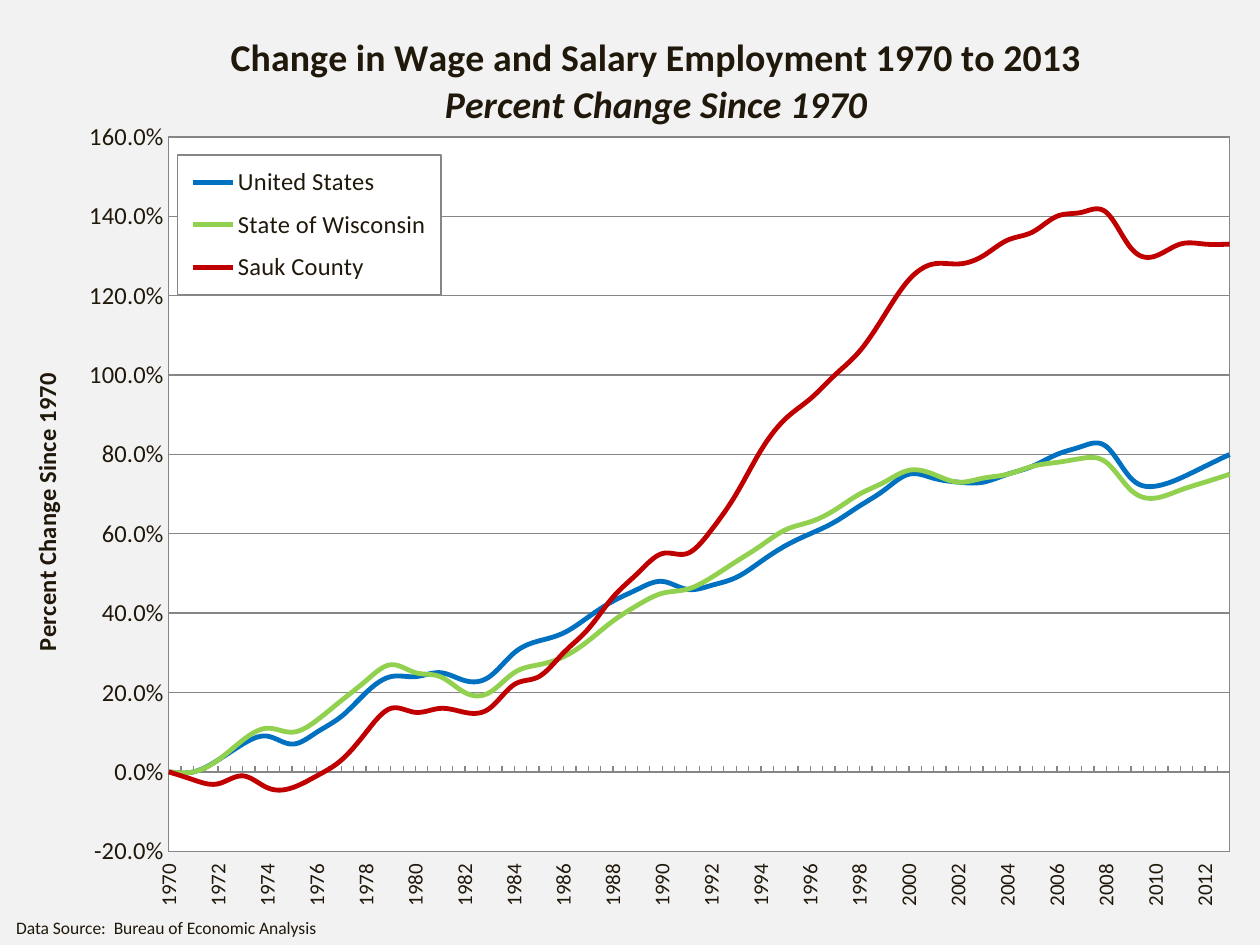
from dataclasses import dataclass

from lxml.etree import SubElement
from pptx import Presentation
from pptx.chart.data import CategoryChartData
from pptx.dml.color import RGBColor
from pptx.enum.chart import (
    XL_CHART_TYPE as ChartType,
    XL_LEGEND_POSITION as LegendPos,
    XL_TICK_LABEL_POSITION as LabelPos,
    XL_TICK_MARK as Tick,
)
from pptx.oxml import parse_xml
from pptx.oxml.ns import nsdecls, qn
from pptx.util import Inches, Pt


@dataclass(frozen=True)
class Theme:
    font: str = "Calibri"
    ink: str = "20180A"
    back: str = "F2F2F2"
    plot: str = "FFFFFF"
    rule: str = "868686"
    title: float = 21.6
    label: float = 14
    year: float = 12
    source: float = 10
    hairline: float = 0.75
    line: float = 2.75


@dataclass(frozen=True)
class Region:
    name: str
    color: str
    percents: tuple[int, ...]


THEME = Theme()
YEARS = range(1970, 2014)
REGIONS = (
    Region("United States", "0070C0", (
        0, 0, 3, 7, 9, 7, 10, 14, 20, 24, 24, 25, 23, 24, 30, 33, 35, 39, 43, 46, 48, 46,
        47, 49, 53, 57, 60, 63, 67, 71, 75, 74, 73, 73, 75, 77, 80, 82, 82, 74, 72, 74, 77, 80)),
    Region("State of Wisconsin", "92D050", (
        0, 0, 3, 8, 11, 10, 13, 18, 23, 27, 25, 24, 20, 20, 25, 27, 29, 33, 38, 42, 45, 46,
        49, 53, 57, 61, 63, 66, 70, 73, 76, 75, 73, 74, 75, 77, 78, 79, 78, 71, 69, 71, 73, 75)),
    Region("Sauk County", "C00000", (
        0, -2, -3, -1, -4, -4, -1, 3, 10, 16, 15, 16, 15, 16, 22, 24, 30, 36, 44, 50, 55, 55,
        61, 70, 81, 89, 94, 100, 106, 115, 124, 128, 128, 130, 134, 136, 140, 141, 141, 132,
        130, 133, 133, 133)),
)


def style_font(font, size: float, bold: bool = False, italic: bool = False) -> None:
    font.name = THEME.font
    font.size = Pt(size)
    font.bold = bold
    font.italic = italic
    font.color.rgb = RGBColor.from_string(THEME.ink)


def write(p, text: str, **fmt) -> None:
    r = p.add_run()
    r.text = text
    style_font(r.font, **fmt)


def style_line(line, color: str, width: float) -> None:
    line.color.rgb = RGBColor.from_string(color)
    line.width = Pt(width)


def place(element, index: int, inner: bool = False, **fractions: float) -> None:
    """Give a chart part a manual layout, in fractions of the chart."""
    for old in element.findall(qn("c:layout")):
        element.remove(old)
    layout = parse_xml(f"<c:layout {nsdecls('c')}/>")
    manual = SubElement(layout, qn("c:manualLayout"))
    if inner:
        SubElement(manual, qn("c:layoutTarget")).set("val", "inner")
    for key in ("x", "y"):
        SubElement(manual, qn(f"c:{key}Mode")).set("val", "edge")
    for key, value in fractions.items():
        SubElement(manual, qn(f"c:{key}")).set("val", str(value))
    element.insert(index, layout)


def area_format(fill: str, outlined: bool):
    """Make the fill and outline element of a chart area."""
    def solid(color: str) -> str:
        return f'<a:solidFill><a:srgbClr val="{color}"/></a:solidFill>'

    outline = solid(THEME.rule) if outlined else "<a:noFill/>"
    return parse_xml(
        f"<c:spPr {nsdecls('c', 'a')}>{solid(fill)}"
        f'<a:ln w="{Pt(THEME.hairline)}">{outline}</a:ln></c:spPr>'
    )


def turn_upward(element) -> None:
    body = element.find(".//" + qn("a:bodyPr"))
    body.set("rot", "-5400000")
    body.set("vert", "horz")


def format_year_axis(axis) -> None:
    axis.tick_label_position = LabelPos.LOW
    axis.major_tick_mark = Tick.NONE
    axis.minor_tick_mark = Tick.INSIDE
    style_font(axis.tick_labels.font, THEME.year)
    style_line(axis.format.line, THEME.rule, THEME.hairline)
    element = axis._element
    turn_upward(element.find(qn("c:txPr")))
    skip = parse_xml(f'<c:tickLblSkip {nsdecls("c")} val="2"/>')
    element.find(qn("c:noMultiLvlLbl")).addprevious(skip)


def format_percent_axis(axis) -> None:
    axis.minimum_scale, axis.maximum_scale, axis.major_unit = -0.2, 1.6, 0.2
    axis.major_tick_mark = axis.minor_tick_mark = Tick.NONE
    axis.tick_labels.number_format = "0.0%"
    axis.tick_labels.number_format_is_linked = False
    style_font(axis.tick_labels.font, THEME.label)
    style_line(axis.format.line, THEME.rule, THEME.hairline)
    style_line(axis.major_gridlines.format.line, THEME.rule, THEME.hairline)
    title = axis.axis_title
    write(title.text_frame.paragraphs[0], "Percent Change Since 1970", size=THEME.label, bold=True)
    turn_upward(title._element)
    place(title._element, 1, x=0.02, y=0.39)
    element = axis._element
    for old in element.findall(qn("c:crossBetween")):
        element.remove(old)
    on_tick = parse_xml(f'<c:crossBetween {nsdecls("c")} val="midCat"/>')
    element.find(qn("c:crosses")).addnext(on_tick)


def format_title(title) -> None:
    tf = title.text_frame
    write(tf.paragraphs[0], "Change in Wage and Salary Employment 1970 to 2013",
          size=THEME.title, bold=True)
    write(tf.add_paragraph(), "Percent Change Since 1970",
          size=THEME.title, bold=True, italic=True)
    place(title._element, 1, x=0.18, y=0.03)


def format_legend(legend) -> None:
    legend.position = LegendPos.BOTTOM
    legend.include_in_layout = False
    style_font(legend.font, THEME.label)
    element = legend._element
    place(element, 1, x=0.141, y=0.164, w=0.209, h=0.148)
    element.find(qn("c:txPr")).addprevious(area_format(THEME.plot, True))


def add_employment_chart(slide, width: int, height: int) -> None:
    data = CategoryChartData(number_format="0.0%")
    data.categories = [str(year) for year in YEARS]
    for region in REGIONS:
        data.add_series(region.name, [percent / 100 for percent in region.percents])
    chart = slide.shapes.add_chart(ChartType.LINE, 0, 0, width, height, data).chart
    style_font(chart.font, THEME.source)
    chart.has_title = chart.has_legend = True
    format_title(chart.chart_title)
    format_legend(chart.legend)
    format_year_axis(chart.category_axis)
    format_percent_axis(chart.value_axis)
    chart.plots[0].vary_by_categories = False
    for series, region in zip(chart.plots[0].series, REGIONS):
        series.smooth = True
        style_line(series.format.line, region.color, THEME.line)

    space = chart._chartSpace
    space.find(qn("c:txPr")).addprevious(area_format(THEME.back, False))
    plot_area = space.find(".//" + qn("c:plotArea"))
    place(plot_area, 0, inner=True, x=0.134, y=0.145, w=0.842, h=0.756)
    plot_area.append(area_format(THEME.plot, True))


def add_source(slide) -> None:
    box = slide.shapes.add_textbox(Inches(0.03), Inches(7.23), Inches(9.95), Inches(0.27))
    tf = box.text_frame
    tf.word_wrap = True
    write(tf.paragraphs[0], "Data Source:  Bureau of Economic Analysis", size=THEME.source)


def main() -> None:
    prs = Presentation()
    prs.slide_width, prs.slide_height = Inches(10), Inches(7.5)
    slide = prs.slides.add_slide(prs.slide_layouts.get_by_name("Blank"))
    add_employment_chart(slide, prs.slide_width, prs.slide_height)
    add_source(slide)
    prs.save("out.pptx")


if __name__ == "__main__":
    main()
